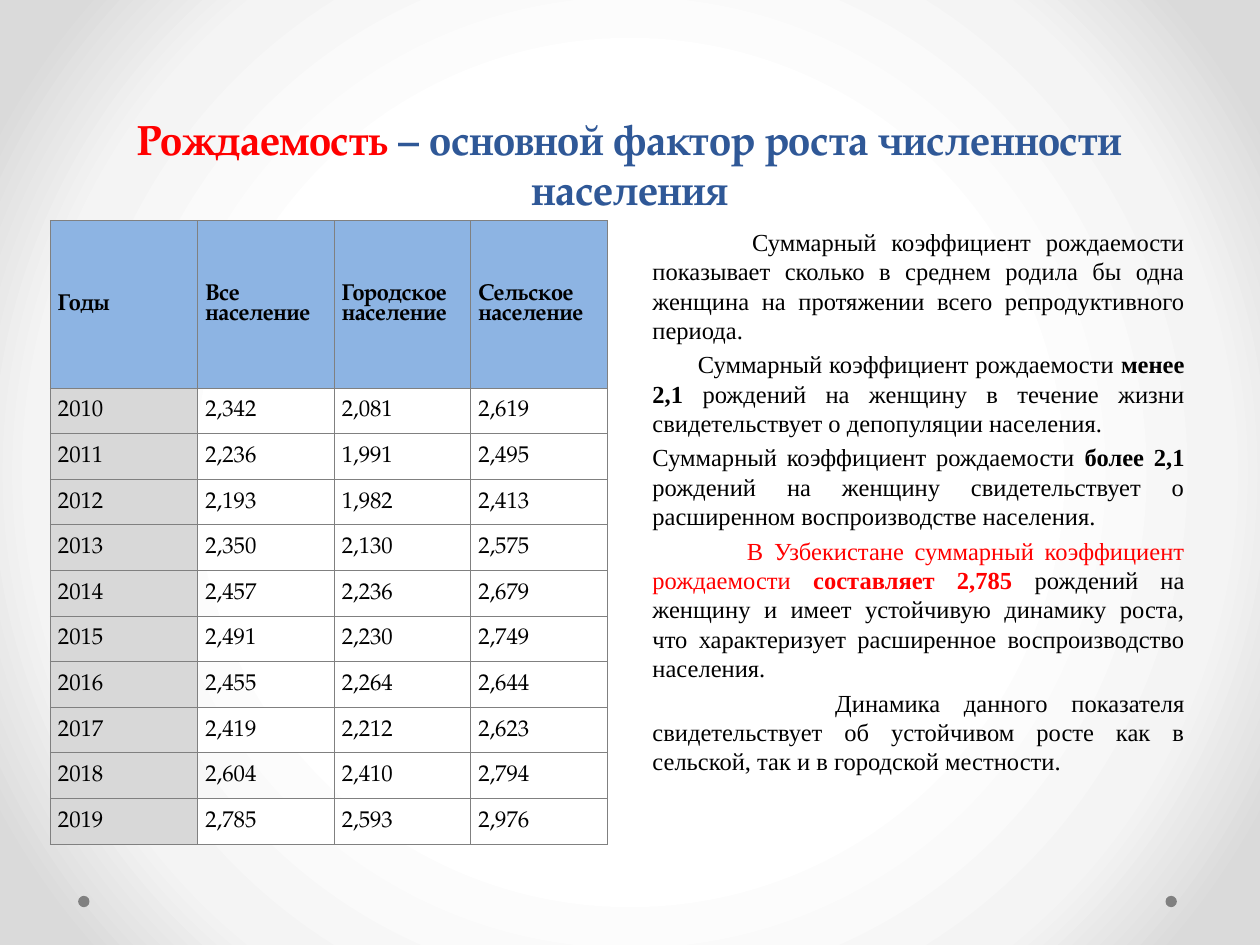
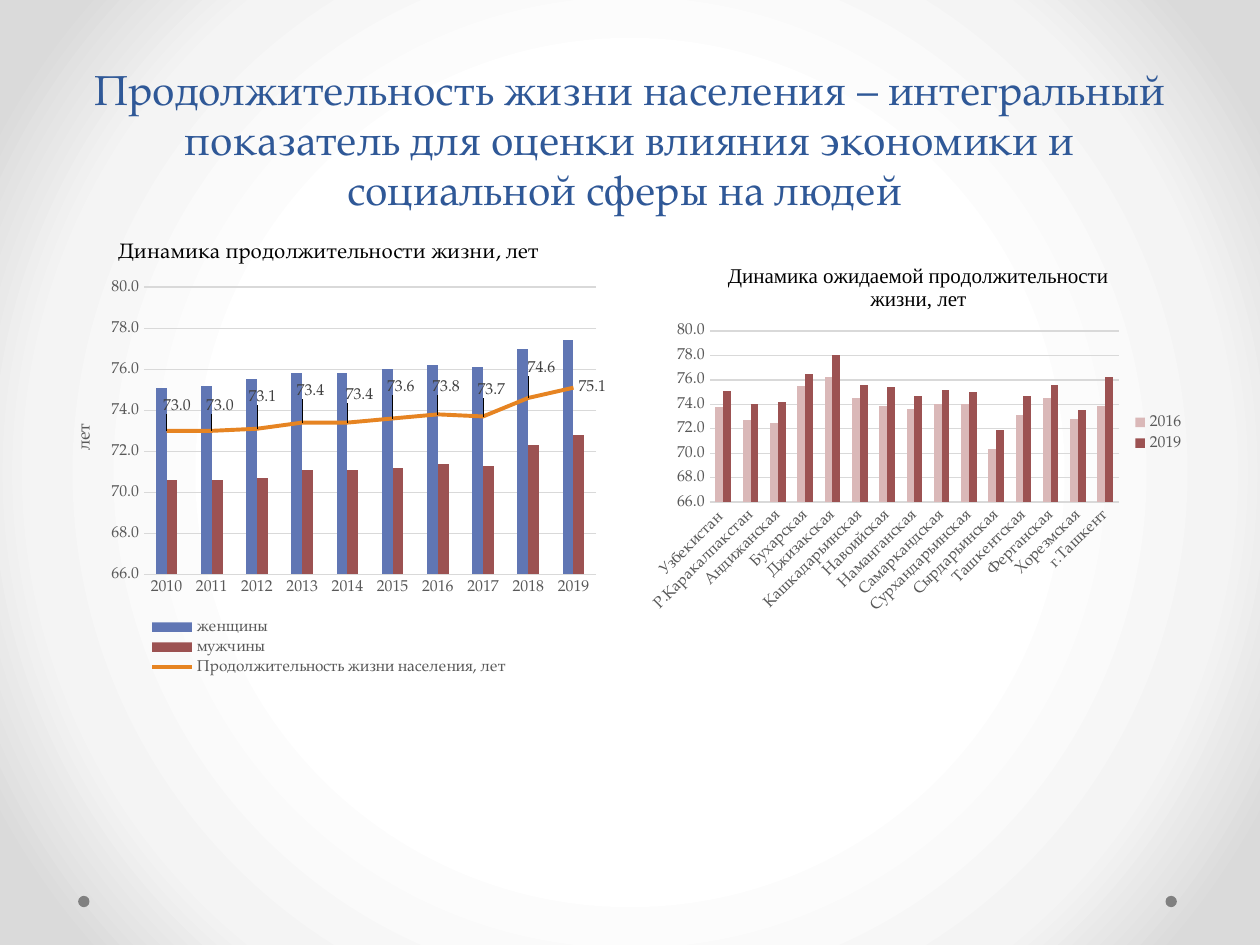
from dataclasses import dataclass, field

from lxml import etree
from pptx import Presentation
from pptx.chart.data import CategoryChartData as ChartData
from pptx.dml.color import RGBColor as Rgb
from pptx.enum.chart import XL_CHART_TYPE as ChartType, XL_LABEL_POSITION as LabelAt
from pptx.enum.chart import XL_LEGEND_POSITION as LegendAt, XL_MARKER_STYLE as Marker
from pptx.enum.chart import XL_TICK_MARK as Tick
from pptx.enum.shapes import MSO_SHAPE as Preset
from pptx.enum.text import MSO_ANCHOR as Anchor, PP_ALIGN as Align
from pptx.oxml import parse_xml
from pptx.oxml.ns import nsdecls, qn
from pptx.util import Inches, Pt


@dataclass(frozen=True)
class Theme:
    serif: str = "TeX Gyre Pagella"
    times: str = "Times New Roman"
    black: str = "000000"
    white: str = "FFFFFF"
    red: str = "FF0000"
    title: str = "2F5897"
    header: str = "8DB4E3"
    years: str = "D8D8D8"
    grey: str = "808080"
    axis: str = "595959"
    label: str = "404040"
    rule: str = "D9D9D9"
    women: str = "6076B4"
    men: str = "9C5252"
    earlier: str = "DAB8B8"
    average: str = "E68422"
    backdrop: tuple = ((50, "FFFFFF"), (76, "F4F4F4"), (92, "DADADA"))
    title_size: float = 24
    body_size: float = 14
    cell_size: float = 13
    chart_title_size: float = 12
    chart_size: float = 10
    small_size: float = 9


THEME = Theme()
WIDTH, HEIGHT = Inches(10), Inches(7.5)
UNIT = WIDTH // 100  # the slide is a grid of 100 columns and 75 rows


@dataclass(frozen=True)
class Box:
    """A place on the grid, in columns and rows."""
    left: float
    top: float
    width: float
    height: float

    def emu(self) -> tuple:
        return tuple(int(n * UNIT) for n in (self.left, self.top, self.width, self.height))


@dataclass(frozen=True)
class Run:
    text: str
    color: str = THEME.black
    bold: bool = False


@dataclass(frozen=True)
class Para:
    runs: tuple
    indent: float = 0  # inches, first line


@dataclass(frozen=True)
class Series:
    name: str
    values: tuple
    color: str
    label_shifts: tuple = field(default=())  # given only for a series drawn as a line


@dataclass(frozen=True)
class ChartSpec:
    """Layouts are percentages of the chart's own size."""
    box: Box
    title: str
    title_font: str
    title_at: tuple
    plot_at: tuple
    gap: int
    categories: tuple
    series: tuple
    legend: LegendAt
    legend_at: tuple = field(default=())
    axis_title: str = ""


TITLE = Box(5, 0, 90, 17.5)
LEFT_HALF = Box(4, 17.5, 44.2, 49.5)
RIGHT_HALF = Box(50.8, 17.5, 44.2, 49.5)
DOTS = [Box(left, 71.1, 0.9, 0.9) for left in (6.2, 92.5)]

YEARS = tuple(str(year) for year in range(2010, 2020))
BIRTH_HEADER = ("Годы", "Все население", "Городское население", "Сельское население")
BIRTH_RATES = (
    ("2,342", "2,081", "2,619"), ("2,236", "1,991", "2,495"), ("2,193", "1,982", "2,413"),
    ("2,350", "2,130", "2,575"), ("2,457", "2,236", "2,679"), ("2,491", "2,230", "2,749"),
    ("2,455", "2,264", "2,644"), ("2,419", "2,212", "2,623"), ("2,604", "2,410", "2,794"),
    ("2,785", "2,593", "2,976"))

BIRTH_TEXT = (
    Para((Run("Суммарный коэффициент рождаемости показывает сколько в среднем родила бы одна "
              "женщина на протяжении всего репродуктивного периода."),), 0.79),
    Para((Run("Суммарный коэффициент рождаемости "), Run("менее 2,1 ", bold=True),
          Run("рождений на женщину в течение жизни свидетельствует о депопуляции населения.")), 0.36),
    Para((Run("Суммарный коэффициент рождаемости "), Run("более 2,1 ", bold=True),
          Run("рождений на женщину свидетельствует о расширенном воспроизводстве населения."))),
    Para((Run("В Узбекистане суммарный коэффициент рождаемости ", THEME.red),
          Run("составляет 2,785 ", THEME.red, True),
          Run("рождений на женщину и имеет устойчивую динамику роста, что характеризует "
              "расширенное воспроизводство населения.")), 0.75),
    Para((Run("Динамика данного показателя свидетельствует об устойчивом росте как в сельской, "
              "так и в городской местности."),), 1.45))

LIFE_BY_YEAR = ChartSpec(
    Box(4, 17.5, 44.2, 36.5), "Динамика продолжительности жизни, лет", THEME.serif,
    (11.5, 3.5), (16.8, 14.5, 81.2, 62.5), 219, YEARS,
    (Series("женщины", (75.1, 75.2, 75.5, 75.8, 75.8, 76.0, 76.2, 76.1, 77.0, 77.4), THEME.women),
     Series("мужчины", (70.6, 70.6, 70.7, 71.1, 71.1, 71.2, 71.4, 71.3, 72.3, 72.8), THEME.men),
     Series("Продолжительность жизни населения, лет",
            (73.0, 73.0, 73.1, 73.4, 73.4, 73.6, 73.8, 73.7, 74.6, 75.1), THEME.average,
            ((-1.5, -5.2), (-1.9, -5.2), (-2.4, -6.7), (-1.9, -6.7), (-1.2, -5.8),
             (-1.9, -6.7), (-1.9, -5.8), (-1.9, -5.6), (-1, -6.3)))),
    LegendAt.BOTTOM, (16.5, 85.8, 67, 14), "лет")

LIFE_BY_REGION = ChartSpec(
    Box(50.8, 19.4, 44.2, 29.9), "Динамика ожидаемой продолжительности жизни, лет", THEME.times,
    (15.1, 3.9), (12.5, 23, 73.5, 45.4), 150,
    ("Узбекистан ", "Р.Каракалпакстан", "Андижанская", "Бухарская", "Джизакская",
     "Кашкадарьинская", "Навоийская", "Наманганская", "Самаркандская", "Сурхандарьинская",
     "Сырдарьинская", "Ташкентская", "Ферганская", "Хорезмская", "г.Ташкент"),
    (Series("2016", (73.8, 72.7, 72.5, 75.5, 76.2, 74.5, 73.9, 73.6, 74.0, 74.0,
                     70.3, 73.1, 74.5, 72.8, 73.9), THEME.earlier),
     Series("2019", (75.1, 74.0, 74.2, 76.5, 78.0, 75.6, 75.4, 74.7, 75.2, 75.0,
                     71.9, 74.7, 75.6, 73.5, 76.2), THEME.men)),
    LegendAt.RIGHT)


# Text
def set_font(font, size: float, color: str, name: str = THEME.serif, bold: bool = False) -> None:
    font.size, font.name, font.bold = Pt(size), name, bold
    font.color.rgb = Rgb.from_string(color)


def write(frame, paras: tuple, *, size: float, font: str = THEME.serif, align=None,
          anchor=None, line_spacing: float = 1.0, before: float = 0) -> None:
    frame.word_wrap = True
    if anchor is not None:
        frame.vertical_anchor = anchor
    for number, para in enumerate(paras):
        target = frame.add_paragraph() if number else frame.paragraphs[0]
        target.alignment, target.line_spacing = align, line_spacing
        target.space_before = Pt(before)
        if para.indent:
            target._p.get_or_add_pPr().set("indent", str(Inches(para.indent)))
        for piece in para.runs:
            run = target.add_run()
            run.text = piece.text
            set_font(run.font, size, piece.color, font, piece.bold)


# Shared slide parts
def paint_master(master) -> None:
    master.background.fill.solid()
    solid = next(master.element.iter(qn("a:solidFill")))
    stops = "".join(f'<a:gs pos="{at * 1000}"><a:srgbClr val="{color}"/></a:gs>'
                    for at, color in THEME.backdrop)
    solid.getparent().replace(solid, parse_xml(
        f'<a:gradFill {nsdecls("a")} rotWithShape="1"><a:gsLst>{stops}</a:gsLst><a:path path="circle">'
        '<a:fillToRect l="50000" t="50000" r="50000" b="50000"/></a:path></a:gradFill>'))


def add_page(deck, *title: Run):
    slide = deck.slides.add_slide(deck.slide_layouts[6])
    for place in DOTS:
        dot = slide.shapes.add_shape(Preset.OVAL, *place.emu())
        dot.shadow.inherit = False
        dot.fill.solid()
        dot.fill.fore_color.rgb = Rgb.from_string(THEME.grey)
        dot.line.fill.background()
    heading = slide.shapes.add_textbox(*TITLE.emu())
    write(heading.text_frame, (Para(title),), size=THEME.title_size,
          align=Align.CENTER, anchor=Anchor.BOTTOM)
    return slide


# Table
def fill_cell(cell, text: str, fill: str, bold: bool) -> None:
    cell.margin_left = cell.margin_right = cell.margin_top = cell.margin_bottom = Inches(0.06)
    write(cell.text_frame, (Para((Run(text, bold=bold),)),), size=THEME.cell_size, line_spacing=0.9)
    cell.vertical_anchor = Anchor.MIDDLE
    props = cell._tc.get_or_add_tcPr()
    for side in ("lnL", "lnR", "lnT", "lnB"):
        props.append(parse_xml(
            f'<a:{side} {nsdecls("a")} w="{Pt(0.6)}"><a:solidFill>'
            f'<a:srgbClr val="{THEME.grey}"/></a:solidFill></a:{side}>'))
    if fill:
        cell.fill.solid()
        cell.fill.fore_color.rgb = Rgb.from_string(fill)
    else:
        cell.fill.background()


def add_birth_table(slide) -> None:
    rows = [BIRTH_HEADER] + [(year, *rates) for year, rates in zip(YEARS, BIRTH_RATES)]
    left, top, width, height = LEFT_HALF.emu()
    table = slide.shapes.add_table(len(rows), len(BIRTH_HEADER), left, top, width, height).table
    table.first_row = table.horz_banding = False
    year_width, header_height = Inches(1.17), Inches(1.33)
    for col, column in enumerate(table.columns):
        column.width = (width - year_width) // 3 if col else year_width
    for row, texts in enumerate(rows):
        table.rows[row].height = (height - header_height) // len(YEARS) if row else header_height
        for col, text in enumerate(texts):
            plain = "" if row % 2 else THEME.white
            fill = THEME.header if row == 0 else THEME.years if col == 0 else plain
            fill_cell(table.cell(row, col), text, fill, row == 0)


# Charts
def layout(*percents: float, inner: bool = False, shift: bool = False):
    node = etree.Element(qn("c:layout"))
    manual = etree.SubElement(node, qn("c:manualLayout"))
    if inner:
        etree.SubElement(manual, qn("c:layoutTarget"), val="inner")
    for axis in "" if shift else "xy":
        etree.SubElement(manual, qn(f"c:{axis}Mode"), val="edge")
    for key, percent in zip("xywh", percents):
        etree.SubElement(manual, qn(f"c:{key}"), val=str(percent / 100))
    return node


def place_after(parent, tag: str, node) -> None:
    for old in parent.findall(qn("c:layout")):
        parent.remove(old)
    parent.find(qn(tag)).addnext(node)


def style_axis(axis) -> None:
    axis.major_tick_mark = axis.minor_tick_mark = Tick.NONE
    set_font(axis.tick_labels.font, THEME.small_size, THEME.axis)


def draw_rule(line, color: str, width: float) -> None:
    line.color.rgb, line.width = Rgb.from_string(color), Pt(width)


def turn_into_line(chart, spec: Series) -> None:
    bars = chart.plots[0]._element
    moved = bars.findall(qn("c:ser"))[-1]
    for flag in moved.findall(qn("c:invertIfNegative")):
        moved.remove(flag)
    lines = parse_xml(f'<c:lineChart {nsdecls("c")}><c:grouping val="standard"/>'
                      '<c:varyColors val="0"/><c:marker val="1"/></c:lineChart>')
    lines.find(qn("c:varyColors")).addnext(moved)
    for axis_id in bars.findall(qn("c:axId")):
        etree.SubElement(lines, qn("c:axId"), val=axis_id.get("val"))
    bars.addnext(lines)

    average = chart.plots[1].series[0]
    average.smooth = False
    average.marker.style = Marker.NONE
    draw_rule(average.format.line, spec.color, 2.25)
    labels = average.data_labels
    labels.show_value, labels.position = True, LabelAt.RIGHT
    labels.number_format, labels.number_format_is_linked = "0.0", False
    set_font(labels.font, THEME.small_size, THEME.label)
    # Labels lifted above the line, without leader lines
    for index, shift in enumerate(spec.label_shifts):
        lifted = average.points[index].data_label
        set_font(lifted.font, THEME.small_size, THEME.label)
        lifted.position = LabelAt.RIGHT
        place_after(labels._element.findall(qn("c:dLbl"))[index], "c:idx", layout(*shift, shift=True))
    labels._element.append(parse_xml(
        f'<c:extLst {nsdecls("c")}><c:ext uri="{{CE6537A1-D6FC-4f65-9D91-7224C49458BB}}" '
        'xmlns:c15="http://schemas.microsoft.com/office/drawing/2012/chart">'
        '<c15:showLeaderLines val="0"/></c:ext></c:extLst>'))


def add_life_chart(slide, spec: ChartSpec) -> None:
    data = ChartData(number_format="0.0")
    data.categories = spec.categories
    for series in spec.series:
        data.add_series(series.name, series.values)
    chart = slide.shapes.add_chart(ChartType.COLUMN_CLUSTERED, *spec.box.emu(), data).chart
    set_font(chart.font, THEME.chart_size, THEME.black)

    title = chart.chart_title
    write(title.text_frame, (Para((Run(spec.title),)),), size=THEME.chart_title_size, font=spec.title_font)
    place_after(title._element, "c:tx", layout(*spec.title_at))

    columns = chart.plots[0]
    columns.gap_width, columns.vary_by_categories = spec.gap, False
    for drawn, series in zip(columns.series, spec.series):
        drawn.format.fill.solid()
        drawn.format.fill.fore_color.rgb = Rgb.from_string(series.color)

    names, years = chart.category_axis, chart.value_axis
    style_axis(names)
    style_axis(years)
    draw_rule(names.format.line, THEME.rule, 0.75)
    # This special angle lets the labels turn when they lack room
    names._element.find(qn("c:txPr")).find(qn("a:bodyPr")).set("rot", "-60000000")
    years.minimum_scale, years.maximum_scale, years.major_unit = 66, 80, 2
    years.tick_labels.number_format, years.tick_labels.number_format_is_linked = "0.0", False
    years.format.line.fill.background()
    draw_rule(years.major_gridlines.format.line, THEME.rule, 0.75)
    if spec.axis_title:
        caption = years.axis_title.text_frame
        write(caption, (Para((Run(spec.axis_title, THEME.axis),)),), size=THEME.chart_size)
        caption._txBody.find(qn("a:bodyPr")).set("rot", str(-90 * 60000))

    chart.has_legend = True
    chart.legend.position, chart.legend.include_in_layout = spec.legend, False
    set_font(chart.legend.font, THEME.small_size, THEME.axis)
    if spec.legend_at:
        place_after(chart.legend._element, "c:legendPos", layout(*spec.legend_at))
    area = columns._element.getparent()
    for old in area.findall(qn("c:layout")):
        area.remove(old)
    area.insert(0, layout(*spec.plot_at, inner=True))
    if spec.series[-1].label_shifts:
        turn_into_line(chart, spec.series[-1])


def main() -> None:
    deck = Presentation()
    deck.slide_width, deck.slide_height = WIDTH, HEIGHT
    paint_master(deck.slide_master)

    # Birth rate
    births = add_page(deck, Run("Рождаемость", THEME.red, True),
                      Run(" – основной фактор роста численности населения", THEME.title, True))
    add_birth_table(births)
    comment = births.shapes.add_textbox(*RIGHT_HALF.emu())
    write(comment.text_frame, BIRTH_TEXT, size=THEME.body_size, font=THEME.times,
          align=Align.JUSTIFY, before=2.8)

    # Life expectancy
    life = add_page(deck, Run("Продолжительность жизни населения – интегральный показатель для "
                              "оценки влияния экономики и социальной сферы на людей ", THEME.title))
    for spec in (LIFE_BY_YEAR, LIFE_BY_REGION):
        add_life_chart(life, spec)
    deck.save("out.pptx")


if __name__ == "__main__":
    main()
